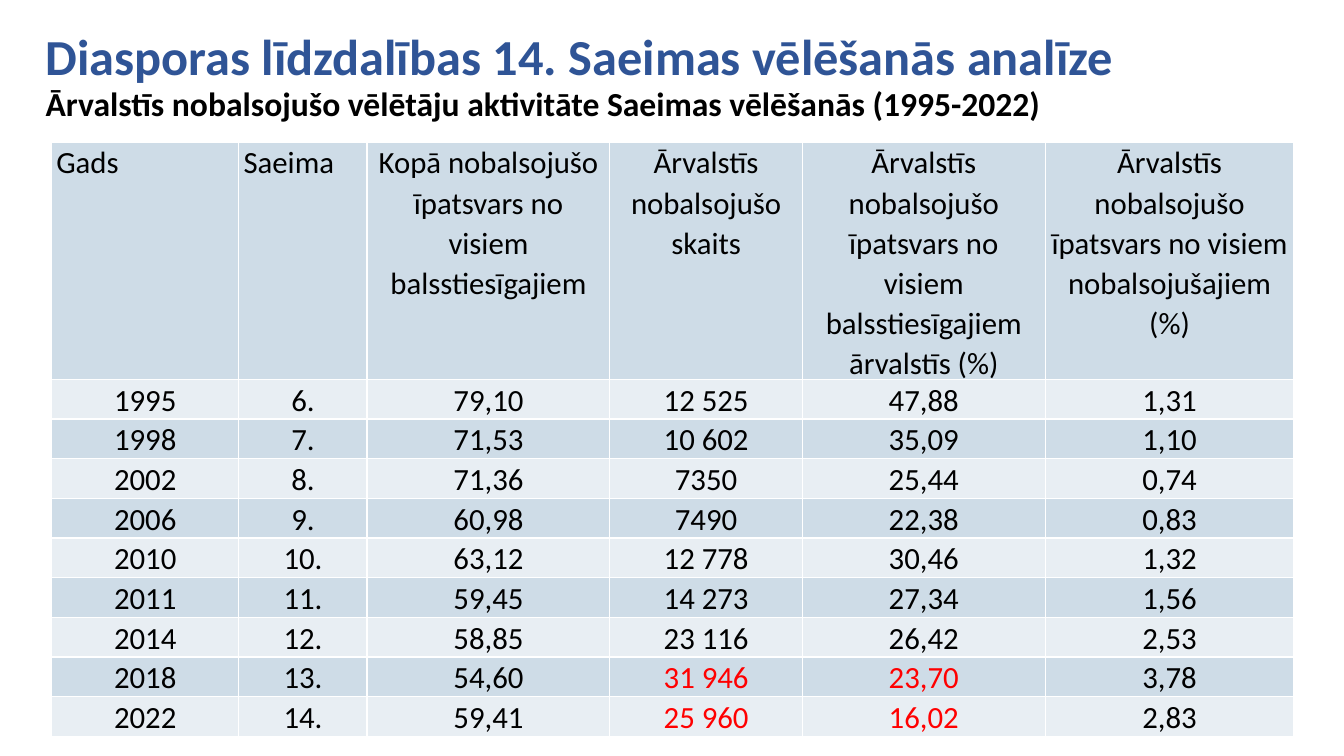
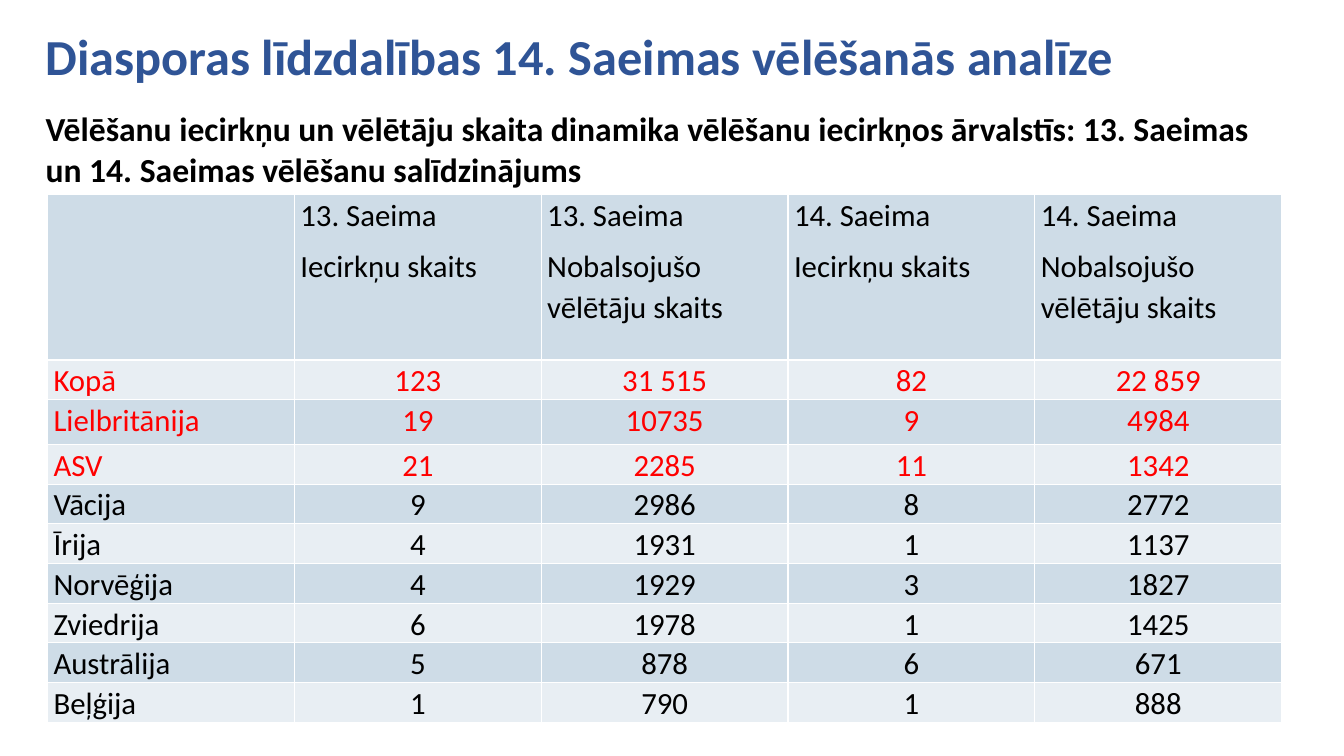
from dataclasses import dataclass

from lxml.etree import SubElement
from pptx import Presentation
from pptx.dml.color import RGBColor
from pptx.enum.text import MSO_ANCHOR, MSO_AUTO_SIZE, PP_ALIGN
from pptx.oxml.ns import qn
from pptx.util import Cm, Pt


@dataclass(frozen=True)
class Theme:
    font: str = "Calibri"
    heading: RGBColor = RGBColor(0x2F, 0x54, 0x96)
    text: RGBColor = RGBColor(0, 0, 0)
    highlight: RGBColor = RGBColor(0xFF, 0, 0)
    bands: tuple = (RGBColor(0xCE, 0xDC, 0xE7), RGBColor(0xE8, 0xEE, 0xF3))
    border: RGBColor = RGBColor(0xFF, 0xFF, 0xFF)
    border_width: int = Pt(1)
    heading_size: int = Pt(36)
    subheading_size: int = Pt(24)
    cell_size: int = Pt(22)


THEME = Theme()
HEADING = "Diasporas līdzdalības 14. Saeimas vēlēšanās analīze"
HEADING_BOX = (Cm(0.9), Cm(0.38), Cm(32.54), Cm(2.2))

TURNOUT = [
    ["Gads", "Saeima", "Kopā nobalsojušo īpatsvars no visiem balsstiesīgajiem",
     "Ārvalstīs nobalsojušo skaits",
     "Ārvalstīs nobalsojušo īpatsvars no visiem balsstiesīgajiem ārvalstīs (%)",
     "Ārvalstīs nobalsojušo īpatsvars no visiem nobalsojušajiem (%)"],
    ["1995", "6.", "79,10", "12 525", "47,88", "1,31"],
    ["1998", "7.", "71,53", "10 602", "35,09", "1,10"],
    ["2002", "8.", "71,36", "7350", "25,44", "0,74"],
    ["2006", "9.", "60,98", "7490", "22,38", "0,83"],
    ["2010", "10.", "63,12", "12 778", "30,46", "1,32"],
    ["2011", "11.", "59,45", "14 273", "27,34", "1,56"],
    ["2014", "12.", "58,85", "23 116", "26,42", "2,53"],
    ["2018", "13.", "54,60", "31 946", "23,70", "3,78"],
    ["2022", "14.", "59,41", "25 960", "16,02", "2,83"],
]

STATIONS = [
    [""] + [f"{saeima}. Saeima\n{count}" for saeima in (13, 14)
            for count in ("Iecirkņu skaits", "Nobalsojušo vēlētāju skaits")],
    ["Kopā", "123", "31 515", "82", "22 859"],
    ["Lielbritānija", "19", "10735", "9", "4984"],
    ["ASV", "21", "2285", "11", "1342"],
    ["Vācija", "9", "2986", "8", "2772"],
    ["Īrija", "4", "1931", "1", "1137"],
    ["Norvēģija", "4", "1929", "3", "1827"],
    ["Zviedrija", "6", "1978", "1", "1425"],
    ["Austrālija", "5", "878", "6", "671"],
    ["Beļģija", "1", "790", "1", "888"],
]


def add_run(paragraph, text, size, color, bold=False):
    run = paragraph.add_run()
    run.text = text
    run.font.name = THEME.font
    run.font.size = size
    run.font.bold = bold
    run.font.color.rgb = color


def add_heading(slide, box):
    heading = slide.shapes.title
    heading.left, heading.top, heading.width, heading.height = box
    frame = heading.text_frame
    frame.auto_size = MSO_AUTO_SIZE.NONE
    frame.vertical_anchor = MSO_ANCHOR.MIDDLE
    paragraph = frame.paragraphs[0]
    paragraph.alignment = PP_ALIGN.LEFT
    paragraph.line_spacing = 0.9
    add_run(paragraph, HEADING, THEME.heading_size, THEME.heading, bold=True)


def add_subheading(slide, box, text):
    frame = slide.shapes.add_textbox(*box).text_frame
    frame.word_wrap = True
    frame.auto_size = MSO_AUTO_SIZE.SHAPE_TO_FIT_TEXT
    add_run(frame.paragraphs[0], text, THEME.subheading_size, THEME.text, bold=True)


def set_borders(cell):
    """Must run before the fill is set, since borders come first in the cell properties."""
    properties = cell._tc.get_or_add_tcPr()
    for side in ("a:lnL", "a:lnR", "a:lnT", "a:lnB"):
        line = SubElement(properties, qn(side), w=str(THEME.border_width))
        fill = SubElement(line, qn("a:solidFill"))
        SubElement(fill, qn("a:srgbClr"), val=str(THEME.border))


def fill_cell(cell, text, band, color, alignment, inset):
    set_borders(cell)
    cell.fill.solid()
    cell.fill.fore_color.rgb = band
    cell.margin_left = cell.margin_right = inset
    cell.margin_top = cell.margin_bottom = 0
    frame = cell.text_frame
    for index, line in enumerate(text.splitlines()):
        paragraph = frame.add_paragraph() if index else frame.paragraphs[0]
        paragraph.alignment = alignment
        paragraph.line_spacing = 1.07
        paragraph.space_after = Pt(8)
        add_run(paragraph, line, THEME.cell_size, color)


def add_data_table(slide, origin, rows, widths, heights, inset, is_left, is_highlighted):
    """is_left and is_highlighted tell from row and column how a cell is set."""
    table = slide.shapes.add_table(len(rows), len(widths), *origin,
                                   sum(widths), sum(heights)).table
    table.first_row = table.horz_banding = False
    for column, width in zip(table.columns, widths):
        column.width = width
    for row, height in zip(table.rows, heights):
        row.height = height
    for r, values in enumerate(rows):
        for c, value in enumerate(values):
            fill_cell(table.cell(r, c), value, THEME.bands[r % 2],
                      THEME.highlight if is_highlighted(r, c) else THEME.text,
                      PP_ALIGN.LEFT if is_left(r, c) else PP_ALIGN.CENTER, inset)


def add_slide(presentation):
    slide = presentation.slides.add_slide(presentation.slide_layouts[5])
    add_heading(slide, HEADING_BOX)
    return slide


def add_turnout_slide(presentation):
    slide = add_slide(presentation)
    add_subheading(slide, (Cm(0.9), Cm(1.96), Cm(26.3), Cm(1.27)),
                   "Ārvalstīs nobalsojušo vēlētāju aktivitāte Saeimas vēlēšanās (1995-2022)")
    add_data_table(
        slide, (Cm(1.3), Cm(3.58)), TURNOUT,
        widths=[Cm(w) for w in (4.72, 3.23, 6.12, 4.85, 6.12, 6.27)],
        heights=[Cm(5.97)] + [Cm(1)] * 9,
        inset=Cm(0.12),
        is_left=lambda r, c: r == 0 and c < 2,
        is_highlighted=lambda r, c: r >= 8 and c in (3, 4))


def add_stations_slide(presentation):
    slide = add_slide(presentation)
    add_subheading(slide, (Cm(0.9), Cm(2.6), Cm(31.7), Cm(2.31)),
                   "Vēlēšanu iecirkņu un vēlētāju skaita dinamika vēlēšanu iecirkņos "
                   "ārvalstīs: 13. Saeimas un 14. Saeimas vēlēšanu salīdzinājums")
    add_data_table(
        slide, (Cm(1.2), Cm(4.91)), STATIONS,
        widths=[Cm(6.22)] * 5,
        heights=[Cm(4.16), Cm(1), Cm(1.13)] + [Cm(1)] * 7,
        inset=Cm(0.15),
        is_left=lambda r, c: r == 0 or c == 0,
        is_highlighted=lambda r, c: 1 <= r <= 3)


def main():
    presentation = Presentation()
    presentation.slide_width, presentation.slide_height = Cm(33.87), Cm(19.05)
    add_turnout_slide(presentation)
    add_stations_slide(presentation)
    presentation.save("out.pptx")


if __name__ == "__main__":
    main()
